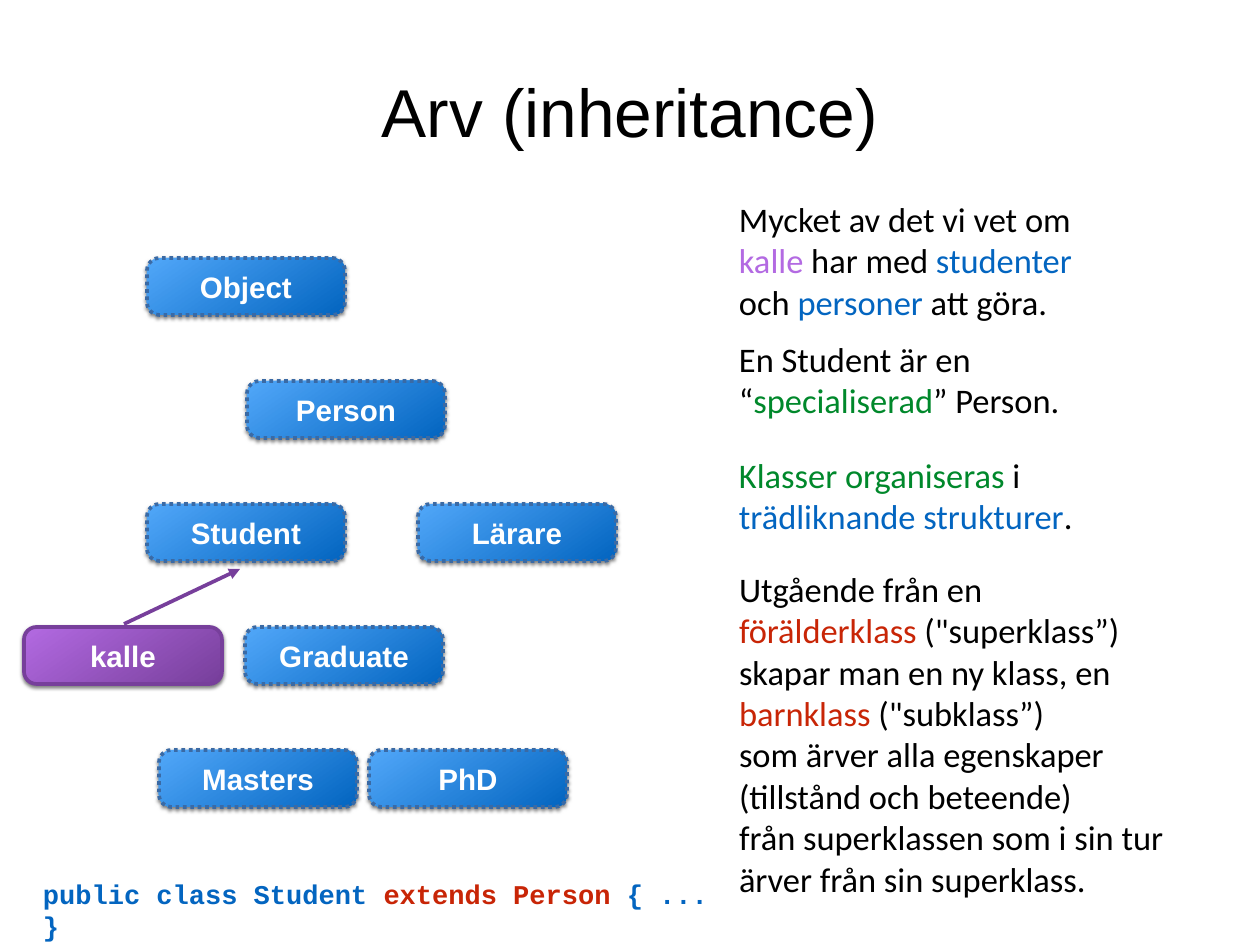
import pptx
import pptx.util
import pptx.dml.color
import pptx.enum.dml
import pptx.enum.shapes
import pptx.enum.text
import pptx.oxml
import pptx.oxml.ns
from dataclasses import dataclass


@dataclass(frozen=True)
class Theme:
    black: str = "000000"
    white: str = "FFFFFF"
    blue: str = "0365C0"
    light_blue: str = "51A7F9"
    outline_blue: str = "3A6AA5"
    purple: str = "773F9B"
    light_purple: str = "B36AE2"
    green: str = "00882B"
    red: str = "C82506"
    title_size: int = 55
    note_size: int = 28
    box_size: int = 24
    code_size: int = 22
    line_width: int = 3
    heading_font: str = "Arial"
    note_font: str = "Calibri"
    code_font: str = "Courier New"


THEME = Theme()
SLIDE_SIZE = (1260, 945)
EMU_PER_PX = 914400 / 88.6
TITLE = "Arv (inheritance)"
TITLE_AREA = (6, 6, 1248, 209)

CLASSES = [
    ("Person", 247, 1),
    ("Student", 147, 2),
    ("Object", 147, 0),
    ("Graduate", 245, 3),
    ("Masters", 159, 4),
    ("PhD", 369, 4),
    ("Lärare", 418, 2),
]
INSTANCE = ("kalle", 24, 3)
ROW_TOP, ROW_STEP = 258, 123
BOX_WIDTH, BOX_HEIGHT = 198, 57
ARROW = (124, 624, 240, 569)

NOTES = [
    ((739, 198, 371, 129), [[
        "Mycket av det vi vet om ", ("kalle", THEME.light_purple), " har med ",
        ("studenter", THEME.blue), " och ", ("personer", THEME.blue), " att göra.",
    ]]),
    ((739, 338, 371, 91), [["En Student är en “", ("specialiserad", THEME.green), "” Person."]]),
    ((739, 454, 371, 89), [[
        ("Klasser organiseras", THEME.green), " i ", ("trädliknande strukturer", THEME.blue), ".",
    ]]),
    ((739, 568, 471, 364), [
        ["Utgående från en"],
        [("förälderklass", THEME.red), " (\"superklass”)"],
        ["skapar man en ny klass, en"],
        [("barnklass", THEME.red), " (\"subklass”)"],
        ["som ärver alla egenskaper (tillstånd och beteende)"],
        ["från superklassen som i sin tur ärver från sin superklass."],
    ]),
]
CODE_AREA = (43, 877, 677, 37)
CODE = [["public class Student ", ("extends Person", THEME.red), " { ... }"]]


def px(*lengths):
    return [pptx.util.Emu(round(length * EMU_PER_PX)) for length in lengths]


def rgb(value):
    return pptx.dml.color.RGBColor.from_string(value)


def write_text(shape, paragraphs, *, size, font, color, bold=False, centered=False):
    frame = shape.text_frame
    frame.word_wrap = True
    frame.margin_left = frame.margin_right = frame.margin_top = frame.margin_bottom = 0
    anchors = pptx.enum.text.MSO_ANCHOR
    frame.vertical_anchor = anchors.MIDDLE if centered else anchors.TOP
    alignments = pptx.enum.text.PP_ALIGN
    for index, pieces in enumerate(paragraphs):
        paragraph = frame.add_paragraph() if index else frame.paragraphs[0]
        paragraph.alignment = alignments.CENTER if centered else alignments.LEFT
        for piece in pieces:
            text, run_color = (piece, color) if isinstance(piece, str) else piece
            run = paragraph.add_run()
            run.text = text
            run.font.size = pptx.util.Pt(size)
            run.font.name = font
            run.font.bold = bold
            run.font.color.rgb = rgb(run_color)


def add_text(slide, area, paragraphs, **text_format):
    write_text(slide.shapes.add_textbox(*px(*area)), paragraphs, **text_format)


def add_shadow(shape):
    namespace = pptx.oxml.ns.nsdecls("a")
    blur, distance = pptx.util.Pt(3), pptx.util.Pt(2)
    shape.shadow.inherit = False
    effects = shape.element.spPr.find(pptx.oxml.ns.qn("a:effectLst"))
    effects.append(pptx.oxml.parse_xml(
        f'<a:outerShdw {namespace} blurRad="{blur}" dist="{distance}" dir="5400000" rotWithShape="0">'
        '<a:srgbClr val="000000"><a:alpha val="50000"/></a:srgbClr></a:outerShdw>'))


def add_box(slide, name, left, row, *, start, end, outline, dotted):
    area = px(left, ROW_TOP + row * ROW_STEP, BOX_WIDTH, BOX_HEIGHT)
    box = slide.shapes.add_shape(pptx.enum.shapes.MSO_SHAPE.ROUNDED_RECTANGLE, *area)
    box.adjustments[0] = 0.22
    box.fill.gradient()
    box.fill.gradient_angle = 305
    for stop, color in zip(box.fill.gradient_stops, (start, end)):
        stop.color.rgb = rgb(color)
    box.line.color.rgb = rgb(outline)
    box.line.width = pptx.util.Pt(THEME.line_width)
    if dotted:
        box.line.dash_style = pptx.enum.dml.MSO_LINE.ROUND_DOT
    add_shadow(box)
    write_text(box, [[name]], size=THEME.box_size, font=THEME.heading_font,
               color=THEME.white, bold=True, centered=True)


def add_arrow(slide, ends):
    arrow = slide.shapes.add_connector(pptx.enum.shapes.MSO_CONNECTOR.STRAIGHT, *px(*ends))
    arrow.line.color.rgb = rgb(THEME.purple)
    arrow.line.width = pptx.util.Pt(THEME.line_width)
    namespace = pptx.oxml.ns.nsdecls("a")
    arrow.line._get_or_add_ln().append(
        pptx.oxml.parse_xml(f'<a:tailEnd {namespace} type="triangle"/>'))
    arrow.element.spPr.append(pptx.oxml.parse_xml(f"<a:effectLst {namespace}/>"))


def main():
    presentation = pptx.Presentation()
    presentation.slide_width, presentation.slide_height = px(*SLIDE_SIZE)
    slide = presentation.slides.add_slide(presentation.slide_layouts[6])
    add_text(slide, TITLE_AREA, [[TITLE]], size=THEME.title_size,
             font=THEME.heading_font, color=THEME.black, centered=True)
    for entry in CLASSES:
        add_box(slide, *entry, start=THEME.light_blue, end=THEME.blue,
                outline=THEME.outline_blue, dotted=True)
    add_box(slide, *INSTANCE, start=THEME.light_purple, end=THEME.purple,
            outline=THEME.purple, dotted=False)
    add_arrow(slide, ARROW)
    for area, paragraphs in NOTES:
        add_text(slide, area, paragraphs, size=THEME.note_size,
                 font=THEME.note_font, color=THEME.black)
    add_text(slide, CODE_AREA, CODE, size=THEME.code_size,
             font=THEME.code_font, color=THEME.blue, bold=True)
    presentation.save("out.pptx")


if __name__ == "__main__":
    main()
